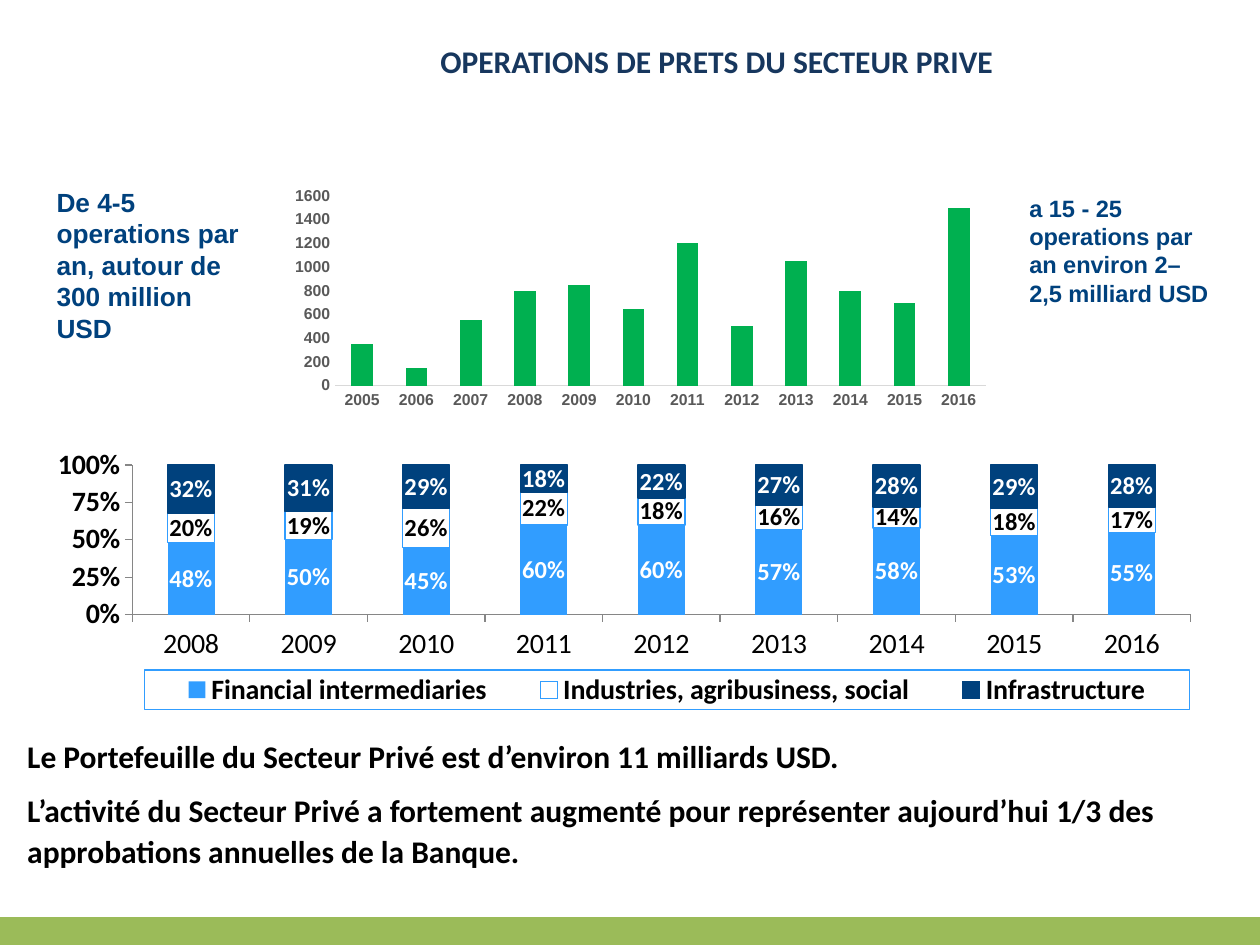
from lxml import etree
from pptx import Presentation
from pptx.chart.data import CategoryChartData
from pptx.dml.color import RGBColor
from pptx.enum.chart import XL_CHART_TYPE, XL_LABEL_POSITION, XL_LEGEND_POSITION, XL_TICK_MARK
from pptx.enum.shapes import MSO_SHAPE
from pptx.enum.text import MSO_ANCHOR, PP_ALIGN
from pptx.oxml import parse_xml
from pptx.oxml.ns import nsdecls, qn
from pptx.util import Cm, Pt

STACKED = XL_CHART_TYPE.COLUMN_STACKED
STACKED_100 = XL_CHART_TYPE.COLUMN_STACKED_100
TICK_NONE, TICK_OUT = XL_TICK_MARK.NONE, XL_TICK_MARK.OUTSIDE
LABEL_CENTER = XL_LABEL_POSITION.CENTER
LEGEND_BOTTOM = XL_LEGEND_POSITION.BOTTOM
RECTANGLE = MSO_SHAPE.RECTANGLE
TOP = MSO_ANCHOR.TOP
LEFT, CENTER = PP_ALIGN.LEFT, PP_ALIGN.CENTER

TITLE = "OPERATIONS DE PRETS DU SECTEUR PRIVE"
BEFORE = "De 4-5 operations par an, autour de 300 million USD"
AFTER = "a 15 - 25 operations par an environ 2– 2,5 milliard USD"
CONCLUSIONS = [
    "Le Portefeuille du Secteur Privé est d’environ 11 milliards USD.",
    "L’activité du Secteur Privé a fortement augmenté pour représenter "
    "aujourd’hui 1/3 des approbations annuelles de la Banque.",
]
VOLUME_YEARS = range(2005, 2017)
VOLUMES = [("Series 1", [350, 150, 550, 800, 850, 650, 1200, 500, 1050, 800, 700, 1500])]
SHARE_YEARS = range(2008, 2017)
SHARES = [
    ("Financial intermediaries", [0.48, 0.5, 0.45, 0.6, 0.6, 0.57, 0.58, 0.53, 0.55]),
    ("Industries, agribusiness, social", [0.2, 0.19, 0.26, 0.22, 0.18, 0.16, 0.14, 0.18, 0.17]),
    ("Infrastructure", [0.32, 0.31, 0.29, 0.18, 0.22, 0.27, 0.28, 0.29, 0.28]),
]

THEME = {
    "white": "FFFFFF", "black": "000000", "band": "9BBB59", "title": "17375E",
    "navy": "00417D", "sky": "319DFF", "green": "00B050",
    "grey": "595959", "pale": "D9D9D9", "axis": "868686",
    "heading_font": "Calibri", "note_font": "Arial",
    "heading": 18, "before": 15, "after": 13.5,
    "volume_axis": 9, "share_axis": 16, "label": 14,
}
SHARE_STYLES = [("sky", None, "white"), ("white", "sky", "black"), ("navy", "navy", "white")]


def color(name):
    return RGBColor.from_string(THEME[name])


def set_font(font, face, size, ink, bold=True):
    values = {"name": THEME[face], "size": Pt(THEME[size]), "bold": bold}
    for key, value in values.items():
        setattr(font, key, value)
    font.color.rgb = color(ink)


def set_line(line, ink, width=0.75):
    if ink:
        line.color.rgb = color(ink)
        line.width = Pt(width)
    else:
        line.fill.background()


def place(shape, left, top, width, height):
    shape.left, shape.top, shape.width, shape.height = map(Cm, (left, top, width, height))


def write(shape, texts, font, align=LEFT, **spacing):
    frame = shape.text_frame
    frame.word_wrap = True
    frame.vertical_anchor = TOP
    for index, text in enumerate(texts):
        para = frame.add_paragraph() if index else frame.paragraphs[0]
        para.alignment = align
        for key, value in spacing.items():
            setattr(para, key, value)
        span = para.add_run()
        span.text = text
        set_font(span.font, *font)


def add_rectangle(page, bounds, fill, line=None):
    box = page.shapes.add_shape(RECTANGLE, *map(Cm, bounds))
    box.shadow.inherit = False
    box.fill.solid()
    box.fill.fore_color.rgb = color(fill)
    set_line(box.line, line, 2)
    return box


def manual_layout(bounds, inner=False):
    target = '<c:layoutTarget val="inner"/>' if inner else ""
    modes = '<c:xMode val="edge"/><c:yMode val="edge"/>'
    sizes = "".join(f'<c:{key} val="{value}"/>' for key, value in zip("xywh", bounds))
    return parse_xml(f'<c:layout {nsdecls("c")}><c:manualLayout>{target}{modes}{sizes}'
                     "</c:manualLayout></c:layout>")


def add_columns(page, kind, bounds, years, rows, plot_bounds, tick):
    data = CategoryChartData()
    data.categories = [str(year) for year in years]
    for name, values in rows:
        data.add_series(name, values)
    chart = page.shapes.add_chart(kind, *map(Cm, bounds), data).chart
    chart.has_title = False
    chart.has_legend = False
    chart.plots[0].gap_width = 150
    chart.plots[0].overlap = 100
    chart.value_axis.has_major_gridlines = False
    for axis in (chart.category_axis, chart.value_axis):
        axis.major_tick_mark = tick
        axis.minor_tick_mark = TICK_NONE
    area = chart.plots[0]._element.getparent()
    for old in area.findall(qn("c:layout")):
        area.remove(old)
    area.insert(0, manual_layout(plot_bounds, inner=True))
    return chart


def paint_series(series, fill, line):
    series.invert_if_negative = False
    series.format.fill.solid()
    series.format.fill.fore_color.rgb = color(fill)
    set_line(series.format.line, line)


def add_volume_chart(page):
    chart = add_columns(page, STACKED, (5.51, 3.66, 15.01, 4.7), VOLUME_YEARS, VOLUMES,
                        (0.083, 0.062, 0.874, 0.814), TICK_NONE)
    for axis, line in ((chart.category_axis, "pale"), (chart.value_axis, None)):
        set_font(axis.tick_labels.font, "note_font", "volume_axis", "grey")
        set_line(axis.format.line, line)
    chart.value_axis.minimum_scale = 0
    chart.value_axis.maximum_scale = 1600
    chart.value_axis.major_unit = 200
    paint_series(chart.series[0], "green", None)


def add_share_chart(page):
    chart = add_columns(page, STACKED_100, (0.89, 8.94, 24, 5.61), SHARE_YEARS, SHARES,
                        (0.074, 0.078, 0.889, 0.537), TICK_OUT)
    for axis, bold in ((chart.category_axis, False), (chart.value_axis, True)):
        set_font(axis.tick_labels.font, "heading_font", "share_axis", "black", bold)
        set_line(axis.format.line, "axis")
    axis = chart.value_axis
    axis.minimum_scale, axis.maximum_scale, axis.major_unit = 0, 1, 0.25
    axis.tick_labels.number_format = "0%"
    axis.tick_labels.number_format_is_linked = False
    for series, (fill, line, ink) in zip(chart.series, SHARE_STYLES):
        paint_series(series, fill, line)
        labels = series.data_labels
        labels.show_value = True
        labels.number_format = "0%"
        labels.number_format_is_linked = False
        labels.position = LABEL_CENTER
        set_font(labels.font, "heading_font", "label", ink)
    add_legend(chart)


def add_legend(chart):
    chart.has_legend = True
    legend = chart.legend
    legend.position = LEGEND_BOTTOM
    legend.include_in_layout = False
    set_font(legend.font, "heading_font", "share_axis", "black")
    element = legend._element
    for old in element.findall(qn("c:layout")):
        element.remove(old)
    element.find(qn("c:legendPos")).addnext(manual_layout((0.084, 0.814, 0.878, 0.143)))
    frame = etree.fromstring(
        f'<c:spPr {nsdecls("c", "a")}><a:ln w="9525"><a:solidFill>'
        f'<a:srgbClr val="{THEME["sky"]}"/></a:solidFill></a:ln></c:spPr>')
    element.find(qn("c:txPr")).addprevious(frame)


def main():
    deck = Presentation()
    deck.slide_width, deck.slide_height = Cm(25.4), Cm(19.05)
    page = deck.slides.add_slide(deck.slide_layouts[5])
    add_rectangle(page, (0, 18.52, 25.4, 0.53), "band", "band")
    title = page.shapes.title
    place(title, 4.9, 0.71, 19.1, 1.02)
    write(title, [TITLE], ("heading_font", "heading", "title"), CENTER, space_after=Pt(12))
    for text, bounds, size in ((AFTER, (20.5, 3.78, 4.32, 2.57), "after"),
                               (BEFORE, (0.89, 3.63, 4.22, 3.45), "before")):
        note = add_rectangle(page, bounds, "white")
        write(note, [text], ("note_font", size, "navy"))
    add_share_chart(page)
    summary = page.shapes.add_textbox(*map(Cm, (0.3, 14.68, 24.41, 4.45)))
    write(summary, CONCLUSIONS, ("heading_font", "heading", "black"),
          line_spacing=1.07, space_after=Pt(8))
    add_volume_chart(page)
    deck.save("out.pptx")


if __name__ == "__main__":
    main()
